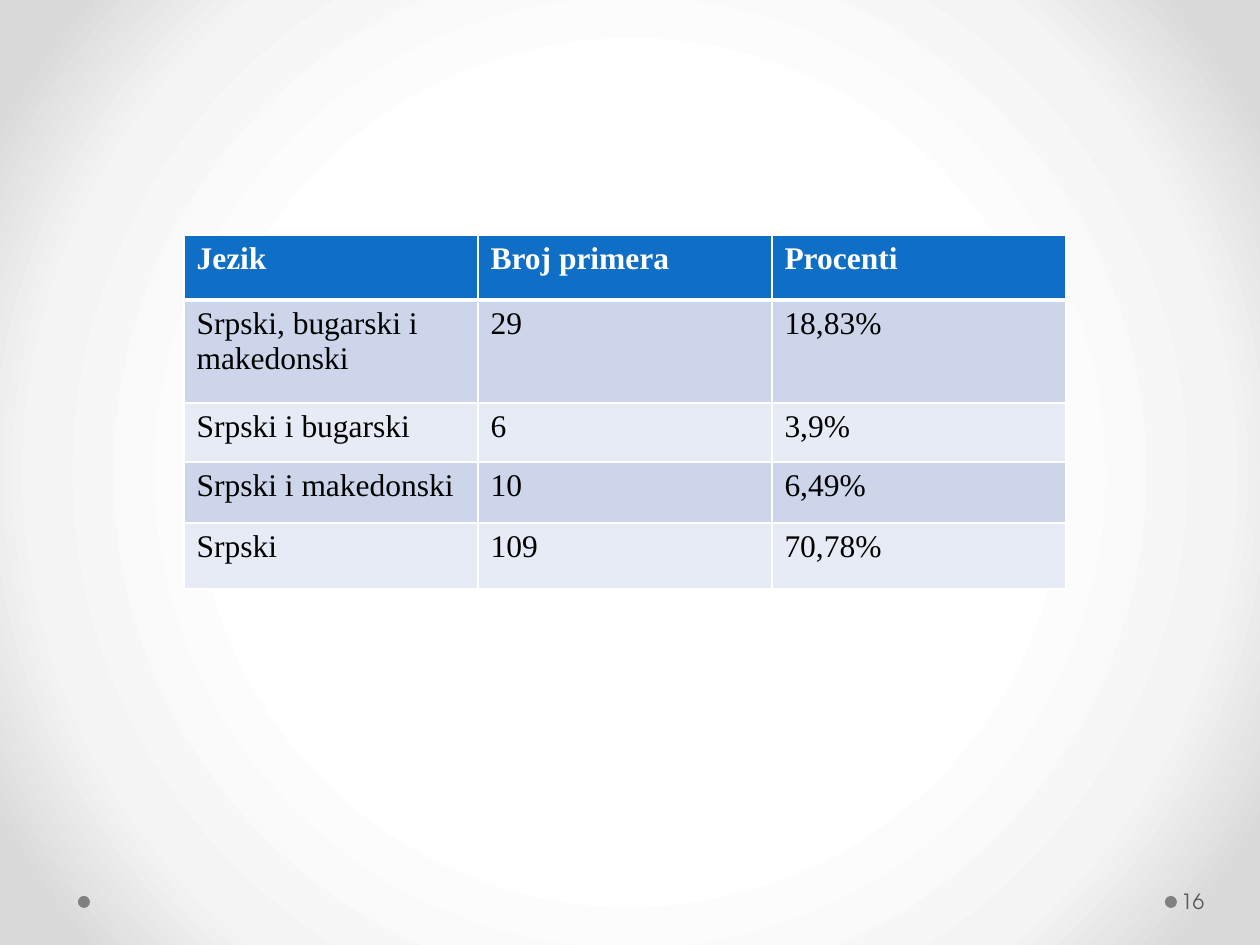
from pptx import Presentation
from pptx.dml.color import RGBColor
from pptx.enum.shapes import MSO_SHAPE
from pptx.enum.text import MSO_ANCHOR
from pptx.oxml import parse_xml
from pptx.oxml.ns import nsdecls, qn
from pptx.util import Pt

PX = 914400 // 126  # EMU in one px

WHITE = RGBColor(0xFF, 0xFF, 0xFF)
BLACK = RGBColor(0x00, 0x00, 0x00)
BLUE = RGBColor(0x0F, 0x6F, 0xC6)
BAND_DARK = RGBColor(0xCC, 0xD5, 0xEA)
BAND_LIGHT = RGBColor(0xE7, 0xEB, 0xF5)
DOT_GREY = RGBColor(0x80, 0x80, 0x80)
NUMBER_GREY = RGBColor(0x59, 0x59, 0x59)

BACKGROUND_STOPS = [(50, WHITE), (76, RGBColor(0xF4, 0xF4, 0xF4)), (92, RGBColor(0xDA, 0xDA, 0xDA))]

ROWS = [
    ("Jezik", "Broj primera", "Procenti"),
    ("Srpski, bugarski i makedonski", "29", "18,83%"),
    ("Srpski i bugarski", "6", "3,9%"),
    ("Srpski i makedonski", "10", "6,49%"),
    ("Srpski", "109", "70,78%"),
]
ROW_HEIGHTS = [65, 103, 59, 61, 66]

HEADER_FORMAT = {"name": "Times New Roman", "size": Pt(18), "bold": True}
BODY_FORMAT = {**HEADER_FORMAT, "bold": False}
NUMBER_FORMAT = {"name": "TeX Gyre Adventor", "size": Pt(12)}


def px(*lengths):
    return [length * PX for length in lengths]


def set_text(text_frame, text, font_format, color):
    run = text_frame.paragraphs[0].add_run()
    run.text = text
    for name, value in font_format.items():
        setattr(run.font, name, value)
    run.font.color.rgb = color


def set_background(slide):
    slide.background.fill.gradient()
    gradient = slide.element.find(".//" + qn("a:gradFill"))
    stops = "".join(
        f'<a:gs pos="{position * 1000}"><a:srgbClr val="{color}"/></a:gs>'
        for position, color in BACKGROUND_STOPS
    )
    radial = parse_xml(
        f'<a:gradFill {nsdecls("a")} rotWithShape="1"><a:gsLst>{stops}</a:gsLst>'
        '<a:path path="circle"><a:fillToRect l="50000" t="50000" r="50000" b="50000"/></a:path>'
        "</a:gradFill>"
    )
    gradient.getparent().replace(gradient, radial)


def set_borders(cell, widths):
    # Borders come before the fill in the cell properties
    properties = cell._tc.get_or_add_tcPr()
    for index, (side, width) in enumerate(widths.items()):
        border = parse_xml(
            f'<a:{side} {nsdecls("a")} w="{Pt(width)}"><a:solidFill>'
            f'<a:srgbClr val="{WHITE}"/></a:solidFill></a:{side}>'
        )
        properties.insert(index, border)


def add_language_table(slide, left, top, width):
    columns = len(ROWS[0])
    frame = slide.shapes.add_table(len(ROWS), columns, *px(left, top, width, sum(ROW_HEIGHTS)))
    table = frame.table
    for column in table.columns:
        column.width = width // columns * PX
    for row_index, (texts, height) in enumerate(zip(ROWS, ROW_HEIGHTS)):
        table.rows[row_index].height = height * PX
        is_header = row_index == 0
        band = BAND_DARK if row_index % 2 else BAND_LIGHT
        for column_index, text in enumerate(texts):
            cell = table.cell(row_index, column_index)
            cell.fill.solid()
            cell.fill.fore_color.rgb = BLUE if is_header else band
            set_borders(cell, {
                "lnL": 1, "lnR": 1,
                "lnT": 3 if row_index == 1 else 1,
                "lnB": 3 if is_header else 1,
            })
            set_text(cell.text_frame, text,
                     HEADER_FORMAT if is_header else BODY_FORMAT,
                     WHITE if is_header else BLACK)


def add_footer(slide, left, top, width, height):
    # Dots at the left edge and before the slide number
    dot_size = 12
    number_left = left + width - 77
    for dot_left in (left, number_left - dot_size):
        dot = slide.shapes.add_shape(
            MSO_SHAPE.OVAL, *px(dot_left, top + 20, dot_size, dot_size))
        dot.shadow.inherit = False
        dot.fill.solid()
        dot.fill.fore_color.rgb = DOT_GREY
        dot.line.fill.background()

    # Slide number
    box = slide.shapes.add_textbox(*px(number_left, top, 77, height))
    frame_format = {"word_wrap": True, "vertical_anchor": MSO_ANCHOR.MIDDLE, "margin_left": 4 * PX}
    for name, value in frame_format.items():
        setattr(box.text_frame, name, value)
    set_text(box.text_frame, "16", NUMBER_FORMAT, NUMBER_GREY)


def main():
    presentation = Presentation()
    presentation.slide_width, presentation.slide_height = px(1260, 945)
    slide = presentation.slides.add_slide(presentation.slide_layouts[6])
    set_background(slide)
    add_footer(slide, 78, 876, 1176, 50)
    add_language_table(slide, 184, 235, 882)
    presentation.save("out.pptx")


if __name__ == "__main__":
    main()
